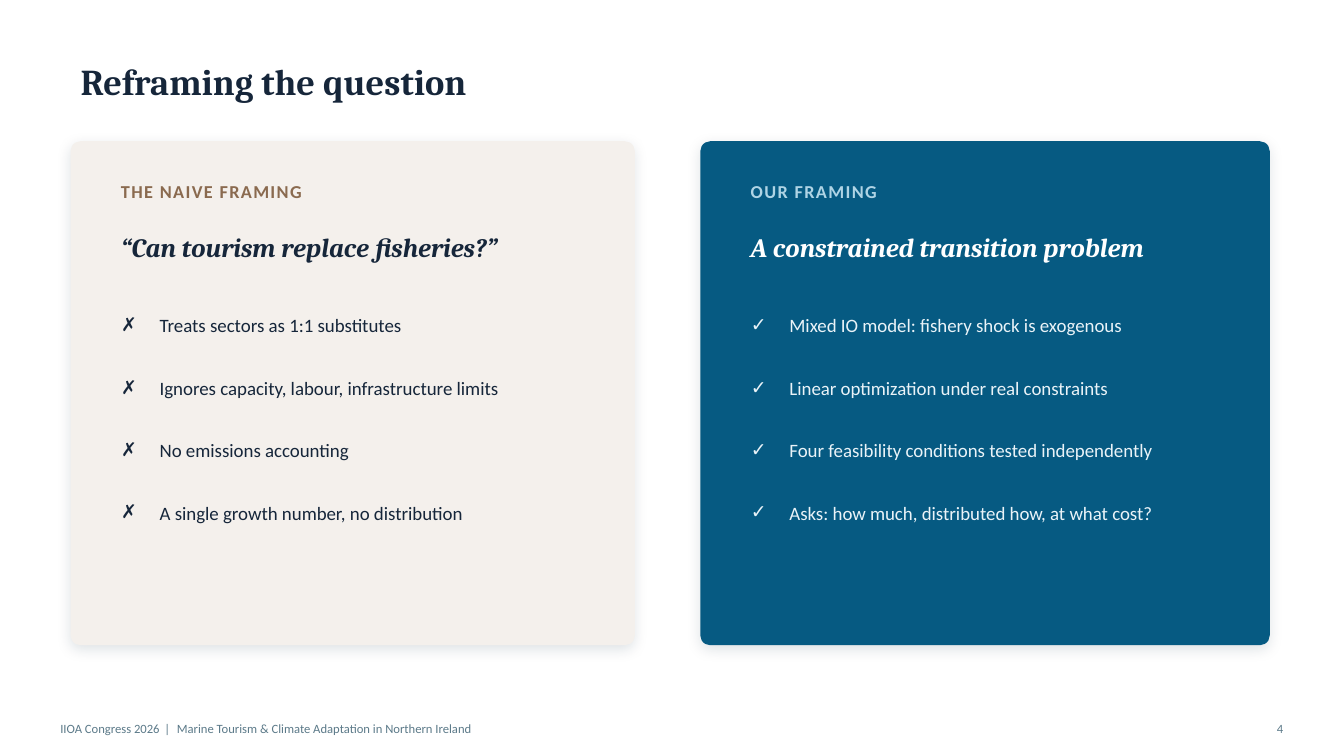
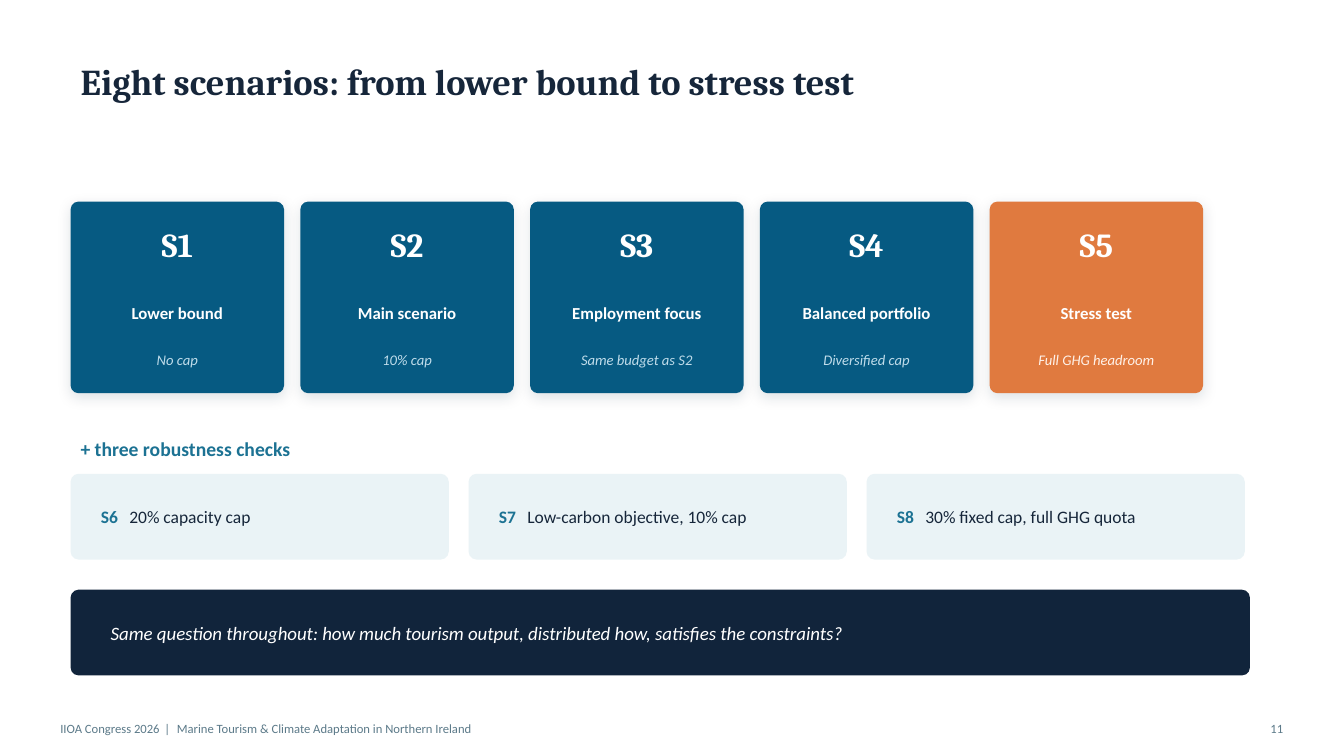
from dataclasses import dataclass

from lxml import etree
from pptx import Presentation
from pptx import util as u
from pptx.dml.color import RGBColor
from pptx.enum import shapes, text
from pptx.oxml.ns import qn
from pptx.shapes.autoshape import Shape
from pptx.slide import Slide
from pptx.text.text import TextFrame, _Paragraph as Paragraph

# Shared look
HEADING, BODY = "Cambria", "Calibri"
WHITE = RGBColor(0xFF, 0xFF, 0xFF)
INK = RGBColor(0x16, 0x26, 0x3A)
NAVY = RGBColor(0x11, 0x24, 0x3B)
BLUE = RGBColor(0x06, 0x5A, 0x82)
TEAL = RGBColor(0x1C, 0x72, 0x93)
ORANGE = RGBColor(0xE0, 0x7A, 0x3F)
SAND = RGBColor(0xF4, 0xF0, 0xEC)
BROWN = RGBColor(0x8A, 0x6A, 0x4F)
SKY = RGBColor(0xAF, 0xD4, 0xE5)
ICE = RGBColor(0xEA, 0xF3, 0xF8)
MIST = RGBColor(0xEA, 0xF3, 0xF6)
PALE_BLUE = RGBColor(0xBF, 0xDC, 0xEA)
PALE_ORANGE = RGBColor(0xFF, 0xF1, 0xE8)
SLATE = RGBColor(0x5C, 0x7A, 0x89)
SHADOW_COLOR = "0B2A3D"

LEFT = 1.78  # content margin, cm
CORNER = 0.2  # corner radius, cm
LEFT_ALIGN, CENTER, RIGHT = (
    text.PP_ALIGN.LEFT, text.PP_ALIGN.CENTER, text.PP_ALIGN.RIGHT)
TWO_CONTENT, TITLE_ONLY = 3, 5


@dataclass(frozen=True)
class Box:
    """A rectangle in centimetres."""
    left: float
    top: float
    width: float
    height: float

    def lengths(self) -> tuple[u.Length, ...]:
        return tuple(u.Cm(n) for n in (self.left, self.top, self.width, self.height))


@dataclass(frozen=True)
class Framing:
    left: float
    width: float
    fill: RGBColor
    label: str
    label_color: RGBColor
    headline: str
    headline_color: RGBColor
    bullet: str
    points: tuple[str, ...]
    point_color: RGBColor


@dataclass(frozen=True)
class Scenario:
    code: str
    name: str
    note: str
    fill: RGBColor = BLUE
    note_color: RGBColor = PALE_BLUE


FRAMINGS = (
    Framing(LEFT, 14.22, SAND, "THE NAIVE FRAMING", BROWN,
            "“Can tourism replace fisheries?”", INK, "✗",
            ("Treats sectors as 1:1 substitutes",
             "Ignores capacity, labour, infrastructure limits",
             "No emissions accounting",
             "A single growth number, no distribution"), INK),
    Framing(17.65, 14.35, BLUE, "OUR FRAMING", SKY,
            "A constrained transition problem", WHITE, "✓",
            ("Mixed IO model: fishery shock is exogenous",
             "Linear optimization under real constraints",
             "Four feasibility conditions tested independently",
             "Asks: how much, distributed how, at what cost?"), ICE),
)
SCENARIOS = (
    Scenario("S1", "Lower bound", "No cap"),
    Scenario("S2", "Main scenario", "10% cap"),
    Scenario("S3", "Employment focus", "Same budget as S2"),
    Scenario("S4", "Balanced portfolio", "Diversified cap"),
    Scenario("S5", "Stress test", "Full GHG headroom", ORANGE, PALE_ORANGE),
)
CHECKS = (
    ("S6", "20% capacity cap"),
    ("S7", "Low-carbon objective, 10% cap"),
    ("S8", "30% fixed cap, full GHG quota"),
)


# Text helpers
def write(para: Paragraph, words: str, *, size: float, color: RGBColor,
          font: str = BODY, bold: bool = False, italic: bool = False,
          spacing: float = 0) -> None:
    """Add one formatted run; spacing is letter spacing in points."""
    span = para.add_run()
    span.text = words
    span.font.name = font
    span.font.size = u.Pt(size)
    span.font.bold = bold
    span.font.italic = italic
    span.font.color.rgb = color
    if spacing:
        span.font._element.set("spc", str(round(spacing * 100)))


def prepare(frame: TextFrame) -> Paragraph:
    frame.word_wrap = True
    frame.auto_size = text.MSO_AUTO_SIZE.NONE
    frame.vertical_anchor = text.MSO_ANCHOR.MIDDLE
    return frame.paragraphs[0]


def add_para(slide: Slide, box: Box, align: text.PP_ALIGN = LEFT_ALIGN) -> Paragraph:
    para = prepare(slide.shapes.add_textbox(*box.lengths()).text_frame)
    para.alignment = align
    return para


def add_label(slide: Slide, box: Box, words: str, *,
              align: text.PP_ALIGN = LEFT_ALIGN, **style) -> None:
    write(add_para(slide, box, align), words, **style)


def place(shape: Shape, box: Box) -> None:
    shape.left, shape.top, shape.width, shape.height = box.lengths()


def set_bullet(para: Paragraph, char: str, indent: float) -> None:
    props = para._p.get_or_add_pPr()
    props.set("marL", str(u.Cm(indent)))
    props.set("indent", str(-u.Cm(indent)))
    etree.SubElement(props, qn("a:buFont"), typeface=BODY)
    etree.SubElement(props, qn("a:buChar"), char=char)


def set_tab(para: Paragraph, position: float) -> None:
    tabs = etree.SubElement(para._p.get_or_add_pPr(), qn("a:tabLst"))
    etree.SubElement(tabs, qn("a:tab"), pos=str(u.Cm(position)), algn="l")


# Cards and page frame
def add_card(slide: Slide, box: Box, fill: RGBColor, *, radius: float = CORNER,
             shadow: bool = False) -> None:
    card = slide.shapes.add_shape(shapes.MSO_SHAPE.ROUNDED_RECTANGLE, *box.lengths())
    card.adjustments[0] = radius / min(box.width, box.height)
    card.fill.solid()
    card.fill.fore_color.rgb = fill
    card.line.fill.background()
    card.shadow.inherit = False
    if shadow:
        effects = card.element.spPr.find(qn("a:effectLst"))
        outer = etree.SubElement(
            effects, qn("a:outerShdw"), blurRad=str(u.Pt(10)), dist=str(u.Pt(3)),
            dir="5400000", algn="bl", rotWithShape="0")
        color = etree.SubElement(outer, qn("a:srgbClr"), val=SHADOW_COLOR)
        etree.SubElement(color, qn("a:alpha"), val="12000")


def add_page(deck, layout: int, title: str, number: int) -> Slide:
    page = deck.slides.add_slide(deck.slide_layouts[layout])
    place(page.shapes.title, Box(LEFT, 1.27, 30.23, 1.52))
    para = prepare(page.shapes.title.text_frame)
    para.alignment = LEFT_ALIGN
    write(para, title, size=26, color=INK, font=HEADING, bold=True)

    footer = {"size": 9, "color": SLATE}
    para = add_para(page, Box(1.27, 17.98, 24.13, 0.76))
    write(para, "IIOA Congress 2026", **footer)
    write(para, " | ", spacing=1.35, **footer)
    write(para, "Marine Tourism & Climate Adaptation in Northern Ireland", **footer)
    add_label(page, Box(31.32, 17.98, 1.27, 0.76), str(number), align=RIGHT, **footer)
    return page


# Slide parts
def add_framing(page: Slide, body: Shape, framing: Framing) -> None:
    add_card(page, Box(framing.left, 3.56, framing.width, 12.7), framing.fill,
             radius=0.25, shadow=True)
    left, width = framing.left + 1.02, 12.45
    add_label(page, Box(left, 4.32, width, 1.02), framing.label, size=13,
              color=framing.label_color, bold=True, spacing=1)
    add_label(page, Box(left, 5.46, width, 1.52), framing.headline, size=19,
              color=framing.headline_color, font=HEADING, bold=True, italic=True)

    # The list sits in front of its card
    page.shapes.element.append(body.element)
    place(body, Box(left, 7.49, width, 6.12))
    para = prepare(body.text_frame)
    for index, point in enumerate(framing.points):
        if index:
            para = body.text_frame.add_paragraph()
        set_bullet(para, framing.bullet, 0.97)
        para.line_spacing = u.Pt(16.5)
        para.space_before = u.Pt(28.1 if index else 0)
        write(para, point, size=13.5, color=framing.point_color)


def add_scenario(page: Slide, left: float, width: float, scenario: Scenario) -> None:
    add_card(page, Box(left, 5.08, width, 4.83), scenario.fill, shadow=True)
    add_label(page, Box(left, 5.46, width, 1.4), scenario.code, align=CENTER,
              size=24, color=WHITE, font=HEADING, bold=True)
    inner, inner_width = left + 0.3, width - 0.6
    add_label(page, Box(inner, 7.24, inner_width, 1.27), scenario.name,
              align=CENTER, size=12, color=WHITE, bold=True)
    add_label(page, Box(inner, 8.43, inner_width, 1.27), scenario.note,
              align=CENTER, size=10.5, color=scenario.note_color, italic=True)


def add_check(page: Slide, box: Box, code: str, words: str) -> None:
    add_card(page, box, MIST)
    para = add_para(page, Box(box.left + 0.51, box.top, box.width - 0.89, box.height))
    set_tab(para, 0.72)
    write(para, code + "\t", size=12.5, color=TEAL, bold=True)
    write(para, words, size=12.5, color=INK)


# Slides
def build_reframing(deck) -> None:
    page = add_page(deck, TWO_CONTENT, "Reframing the question", 4)
    bodies = [page.placeholders[1], page.placeholders[2]]
    for body, framing in zip(bodies, FRAMINGS):
        add_framing(page, body, framing)


def build_scenarios(deck) -> None:
    page = add_page(deck, TITLE_ONLY,
                    "Eight scenarios: from lower bound to stress test", 11)
    width, gap = 5.38, 0.41
    for index, scenario in enumerate(SCENARIOS):
        add_scenario(page, LEFT + index * (width + gap), width, scenario)

    add_label(page, Box(LEFT, 10.8, 12.7, 1.02), "+ three robustness checks",
              size=14, color=TEAL, bold=True)
    width, gap = 9.53, 0.5
    for index, (code, words) in enumerate(CHECKS):
        box = Box(LEFT + index * (width + gap), 11.94, width, 2.16)
        add_check(page, box, code, words)

    # Closing band
    add_card(page, Box(LEFT, 14.86, 29.72, 2.16), NAVY)
    add_label(page, Box(2.54, 14.86, 28.19, 2.16),
              "Same question throughout: how much tourism output, distributed how, "
              "satisfies the constraints?", size=13.5, color=WHITE, italic=True)


def main() -> None:
    deck = Presentation()
    deck.slide_width, deck.slide_height = u.Cm(33.87), u.Cm(19.05)
    build_reframing(deck)
    build_scenarios(deck)
    deck.save("out.pptx")


if __name__ == "__main__":
    main()
